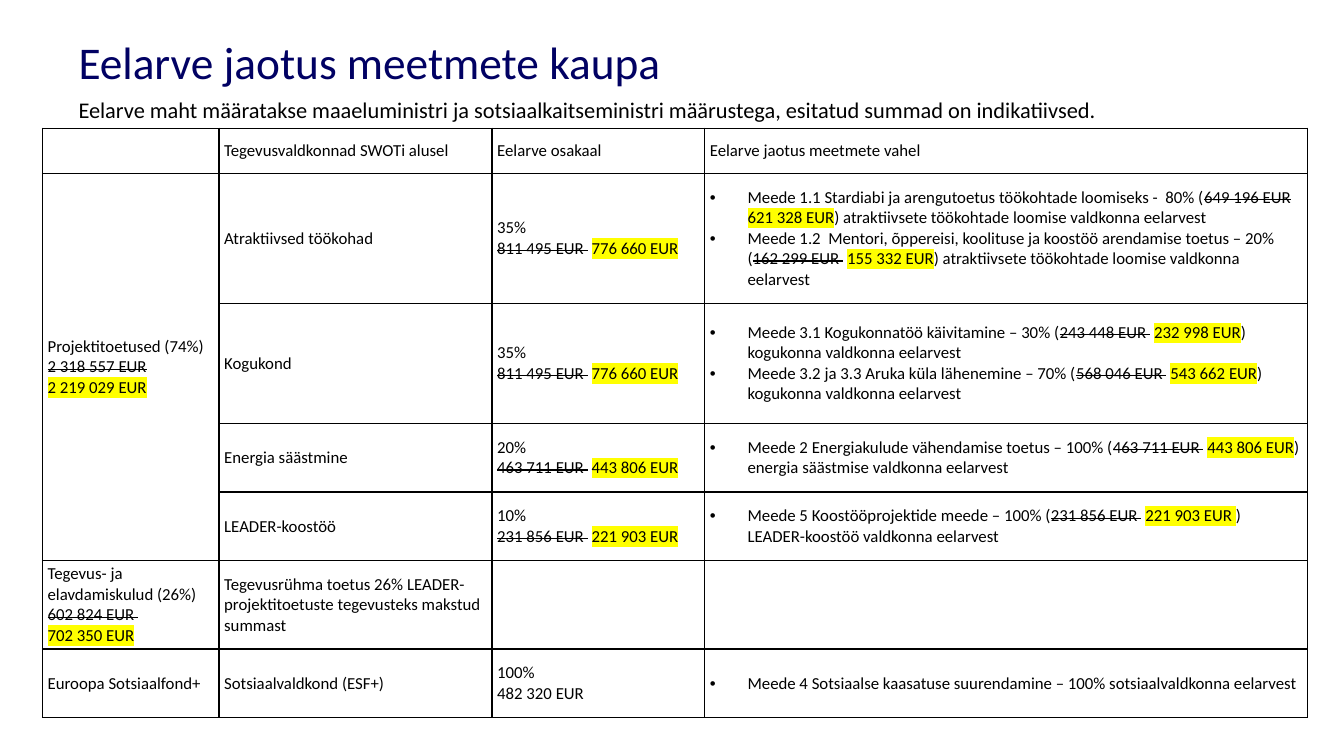
from lxml import etree
from pptx import Presentation
from pptx.dml.color import RGBColor
from pptx.enum.text import MSO_ANCHOR
from pptx.oxml.ns import qn
from pptx.util import Cm, Pt

MID = MSO_ANCHOR.MIDDLE
TOP = MSO_ANCHOR.TOP
FONT = "Calibri"
HUES = {"navy": "010163", "ink": "000000", "mark": "FFFF00", "paper": "FFFFFF"}
COLS = [4.45, 6.88, 5.36, 15.19]
HEAD = ["", "Tegevusvaldkonnad SWOTi alusel", "Eelarve osakaal",
        "Eelarve jaotus meetmete vahel"]
# In cell text, | parts runs: a leading - is struck out, a leading + is marked.
ROWS = [
    (1.14, HEAD),
    (3.28, ["Projektitoetused (74%)\n|-2 318 557 EUR|\n|+2 219 029 EUR",
            "Atraktiivsed töökohad",
            "35%\n|-811 495 EUR | |+776 660 EUR",
            "Meede 1.1 Stardiabi ja arengutoetus töökohtade loomiseks -  80% "
            "(|-649 196 EUR| |+621 328 EUR|) atraktiivsete töökohtade loomise "
            "valdkonna eelarvest\n"
            "Meede 1.2  Mentori, õppereisi, koolituse ja koostöö arendamise "
            "toetus – 20% (|-162 299 EUR | |+155 332 EUR|) atraktiivsete "
            "töökohtade loomise valdkonna eelarvest"]),
    (3.02, ["", "Kogukond",
            "35%\n|-811 495 EUR | |+776 660 EUR",
            "Meede 3.1 Kogukonnatöö käivitamine – 30% "
            "(|-243 448 EUR | |+232 998 EUR|) kogukonna valdkonna eelarvest\n"
            "Meede 3.2 ja 3.3 Aruka küla lähenemine – 70% "
            "(|-568 046 EUR | |+543 662 EUR|) kogukonna valdkonna eelarvest"]),
    (1.73, ["", "Energia säästmine",
            "20%\n|-463 711 EUR | |+443 806 EUR",
            "Meede 2 Energiakulude vähendamise toetus – 100% "
            "(|-463 711 EUR | |+443 806 EUR|) energia säästmise valdkonna "
            "eelarvest"]),
    (1.73, ["", "LEADER-koostöö",
            "10%\n|-231 856 EUR | |+221 903 EUR",
            "Meede 5 Koostööprojektide meede – 100% "
            "(|-231 856 EUR | |+221 903 EUR |) LEADER-koostöö valdkonna "
            "eelarvest"]),
    (2.03, ["Tegevus- ja\nelavdamiskulud (26%)\n|-602 824 EUR |\n|+702 350 EUR",
            "Tegevusrühma toetus 26% LEADER-projektitoetuste tegevusteks "
            "makstud summast", "", ""]),
    (1.73, ["Euroopa Sotsiaalfond+", "Sotsiaalvaldkond (ESF+)",
            "100%\n482 320 EUR",
            "Meede 4 Sotsiaalse kaasatuse suurendamine – 100% "
            "sotsiaalvaldkonna eelarvest"]),
]


def tint(name):
    return RGBColor.from_string(HUES[name])


def add_run(para, text, size, hue):
    sign = text[0] if text[0] in "-+" else ""
    run = para.add_run()
    run.text = text[len(sign):]
    run.font.size = Pt(size)
    run.font.color.rgb = tint(hue)
    props = run._r.get_or_add_rPr()
    if sign == "-":
        props.set("strike", "sngStrike")
    if sign == "+":
        mark = etree.SubElement(props, qn("a:highlight"))
        etree.SubElement(mark, qn("a:srgbClr"), val=HUES["mark"])
    run.font.name = FONT


def put(frame, text, size=12, hue="ink", bullet=False):
    frame.word_wrap = True
    for num, line in enumerate(text.split("\n")):
        para = frame.add_paragraph() if num else frame.paragraphs[0]
        if bullet:
            props = para._p.get_or_add_pPr()
            props.set("marL", str(Cm(0.95)))
            props.set("indent", str(-Cm(0.95)))
            etree.SubElement(props, qn("a:buFont"), typeface="Arial")
            etree.SubElement(props, qn("a:buChar"), char="•")
        for part in filter(None, line.split("|")):
            add_run(para, part, size, hue)
        if not line:
            para.font.size = Pt(size)


def add_text(slide, box, text, anchor, **fmt):
    frame = slide.shapes.add_textbox(*map(Cm, box)).text_frame
    frame.vertical_anchor = anchor
    put(frame, text, **fmt)


def add_rules(cell):
    props = cell._tc.get_or_add_tcPr()
    for side in ("lnL", "lnR", "lnT", "lnB"):
        rule = etree.SubElement(props, qn("a:" + side), w=str(Pt(1)))
        fill = etree.SubElement(rule, qn("a:solidFill"))
        etree.SubElement(fill, qn("a:srgbClr"), val=HUES["ink"])


def add_grid(slide, left, top):
    high = sum(size for size, texts in ROWS)
    box = map(Cm, (left, top, sum(COLS), high))
    grid = slide.shapes.add_table(len(ROWS), len(COLS), *box).table
    grid.first_row = grid.horz_banding = False
    for col, width in zip(grid.columns, COLS):
        col.width = Cm(width)
    for r, (size, texts) in enumerate(ROWS):
        grid.rows[r].height = Cm(size)
        for c, text in enumerate(texts):
            cell = grid.cell(r, c)
            cell.vertical_anchor = MID
            cell.margin_left = cell.margin_right = Cm(0.13)
            cell.margin_top = cell.margin_bottom = Cm(0.08)
            add_rules(cell)
            cell.fill.solid()
            cell.fill.fore_color.rgb = tint("paper")
            put(cell.text_frame, text, bullet=bool(r and text and c == 3))
    grid.cell(1, 0).merge(grid.cell(4, 0))


def main():
    deck = Presentation()
    deck.slide_width, deck.slide_height = Cm(33.87), Cm(19.05)
    slide = deck.slides.add_slide(deck.slide_layouts[6])
    add_grid(slide, 1.07, 3.23)
    add_text(slide, (1.73, 0.64, 18.44, 1.83), "Eelarve jaotus meetmete kaupa",
             MID, size=32.4, hue="navy")
    add_text(slide, (1.73, 2.31, 29.97, 0.94),
             "Eelarve maht määratakse maaeluministri ja sotsiaalkaitseministri "
             "määrustega, esitatud summad on indikatiivsed.", TOP, size=16)
    deck.save("out.pptx")


if __name__ == "__main__":
    main()
